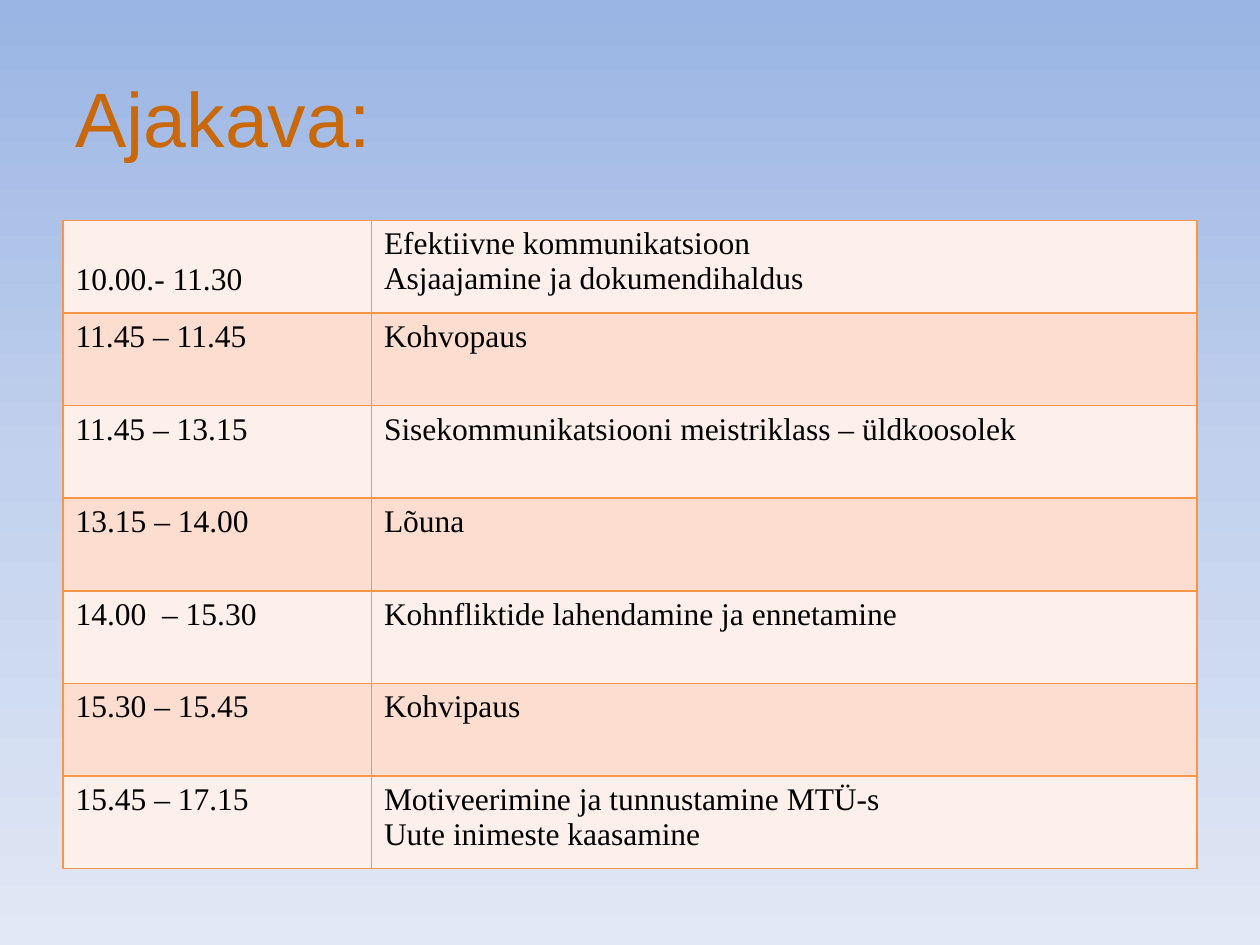
from copy import deepcopy
from dataclasses import dataclass

from lxml.etree import SubElement
from pptx import Presentation
from pptx.dml.color import RGBColor
from pptx.enum.text import MSO_ANCHOR
from pptx.oxml.ns import qn
from pptx.slide import Slide
from pptx.table import _Cell
from pptx.text.text import TextFrame
from pptx.util import Inches, Pt

SLIDE_WIDTH, SLIDE_HEIGHT = Inches(10), Inches(7.5)
MARGIN = 0.05 * SLIDE_WIDTH
CONTENT_WIDTH = 0.9 * SLIDE_WIDTH
TIME_SHARE = 0.272
ROW_HEIGHT = Inches(0.735)
LINE_HEIGHT = Inches(0.28)
CELL_PADDING = Inches(0.05)
BACKGROUND = [(0, "9AB5E4"), (0.5, "C2D1ED"), (1, "E1E8F5")]
BAND_FILLS = ["FDEFE9", "FCDDCF"]
BORDER_COLOR = "F79646"


@dataclass
class Session:
    time: str
    topics: list[str]
    time_line: int = 0


SESSIONS = [
    Session("10.00.- 11.30", ["Efektiivne kommunikatsioon", "Asjaajamine ja dokumendihaldus"], time_line=1),
    Session("11.45 – 11.45", ["Kohvopaus"]),
    Session("11.45 – 13.15", ["Sisekommunikatsiooni meistriklass – üldkoosolek"]),
    Session("13.15 – 14.00", ["Lõuna"]),
    Session("14.00  – 15.30", ["Kohnfliktide lahendamine ja ennetamine"]),
    Session("15.30 – 15.45", ["Kohvipaus"]),
    Session("15.45 – 17.15", ["Motiveerimine ja tunnustamine MTÜ-s", "Uute inimeste kaasamine"]),
]


def color(value: str) -> RGBColor:
    return RGBColor.from_string(value)


def write(frame: TextFrame, text: str, *, size: float, font: str, ink: str) -> None:
    frame.text = text
    frame.word_wrap = True
    for paragraph in frame.paragraphs:
        for run in paragraph.runs:
            run.font.size = Pt(size)
            run.font.name = font
            run.font.color.rgb = color(ink)


def paint_background(slide: Slide) -> None:
    fill = slide.background.fill
    fill.gradient()
    fill.gradient_angle = 270
    stop_list = slide.element.find(".//" + qn("a:gsLst"))
    stop_list.insert(1, deepcopy(stop_list[0]))
    for stop, (position, shade) in zip(fill.gradient_stops, BACKGROUND):
        stop.position = position
        stop.color.rgb = color(shade)


def outline(cell: _Cell) -> None:
    properties = cell._tc.get_or_add_tcPr()
    for index, side in enumerate(("a:lnL", "a:lnR", "a:lnT", "a:lnB")):
        line = properties.makeelement(qn(side), {"w": str(Pt(1))})
        fill = SubElement(line, qn("a:solidFill"))
        SubElement(fill, qn("a:srgbClr"), val=BORDER_COLOR)
        properties.insert(index, line)


def fill_cell(cell: _Cell, text: str, band: str, first_line: int = 0) -> None:
    write(cell.text_frame, text, size=18, font="Times New Roman", ink="000000")
    cell.margin_top = CELL_PADDING + first_line * LINE_HEIGHT
    cell.fill.solid()
    cell.fill.fore_color.rgb = color(band)
    outline(cell)


def add_title(slide: Slide, text: str) -> None:
    title = slide.shapes.add_textbox(MARGIN, Inches(0.3), CONTENT_WIDTH, Inches(1.25))
    write(title.text_frame, text, size=44, font="Arial", ink="C86808")
    title.text_frame.vertical_anchor = MSO_ANCHOR.MIDDLE


def add_schedule(slide: Slide, sessions: list[Session]) -> None:
    schedule = slide.shapes.add_table(
        len(sessions), 2, MARGIN, Inches(1.75), CONTENT_WIDTH, ROW_HEIGHT * len(sessions)
    ).table
    schedule.first_row = schedule.horz_banding = False
    for column, share in zip(schedule.columns, (TIME_SHARE, 1 - TIME_SHARE)):
        column.width = round(CONTENT_WIDTH * share)
    for index, session in enumerate(sessions):
        schedule.rows[index].height = ROW_HEIGHT
        band = BAND_FILLS[index % 2]
        fill_cell(schedule.cell(index, 0), session.time, band, session.time_line)
        fill_cell(schedule.cell(index, 1), "\n".join(session.topics), band)


def main() -> None:
    presentation = Presentation()
    presentation.slide_width, presentation.slide_height = SLIDE_WIDTH, SLIDE_HEIGHT
    slide = presentation.slides.add_slide(presentation.slide_layouts[6])
    paint_background(slide)
    add_title(slide, "Ajakava:")
    add_schedule(slide, SESSIONS)
    presentation.save("out.pptx")


if __name__ == "__main__":
    main()
